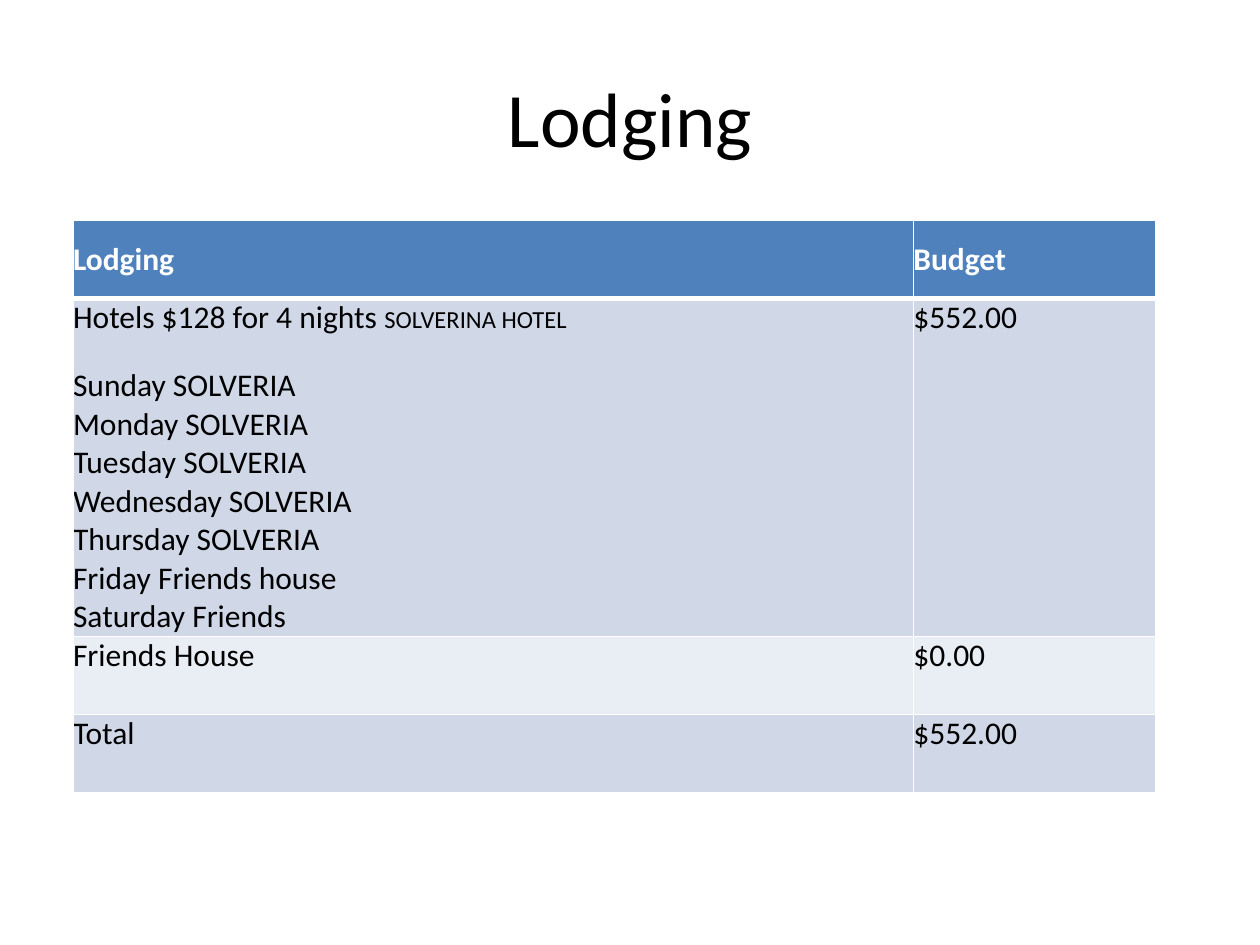
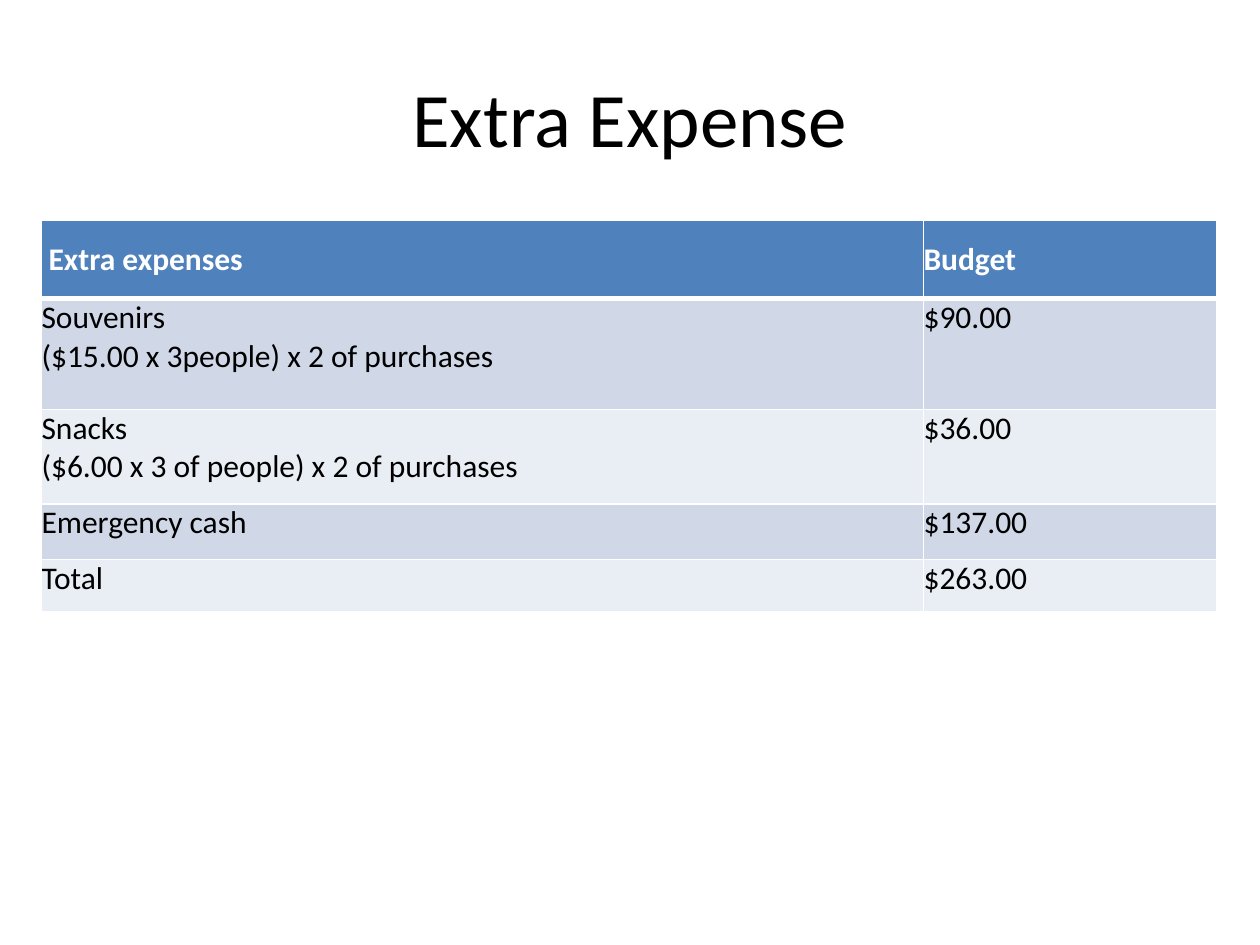
from lxml import etree
from pptx import Presentation
from pptx.dml.color import RGBColor
from pptx.enum.text import MSO_ANCHOR, PP_ALIGN
from pptx.oxml.ns import qn
from pptx.util import Inches, Pt

MIDDLE, TOP = MSO_ANCHOR.MIDDLE, MSO_ANCHOR.TOP
CENTER = PP_ALIGN.CENTER

BLACK = RGBColor(0x00, 0x00, 0x00)
WHITE = RGBColor(0xFF, 0xFF, 0xFF)
HEADER_BLUE = RGBColor(0x4F, 0x81, 0xBD)
BANDS = (RGBColor(0xD0, 0xD8, 0xE8), RGBColor(0xE9, 0xED, 0xF4))

FONT = "Calibri"
BODY_SIZE, NOTE_SIZE, TITLE_SIZE = 18, 14, 44
NIGHTS_GAP = 17  # points between the hotel line and the list of nights
TABLE_TOP = 1.75

# Each cell is a list of lines
LODGING_ROWS = [
    (["Lodging"], ["Budget"]),
    (["Hotels $128 for 4 nights ", "Sunday SOLVERIA", "Monday SOLVERIA",
      "Tuesday SOLVERIA", "Wednesday SOLVERIA", "Thursday SOLVERIA",
      "Friday Friends house", "Saturday Friends"], ["$552.00"]),
    (["Friends House"], ["$0.00"]),
    (["Total"], ["$552.00"]),
]
EXTRA_ROWS = [
    ([" Extra expenses"], ["Budget"]),
    (["Souvenirs", "($15.00 x 3people) x 2 of purchases"], ["$90.00"]),
    (["Snacks", "($6.00 x 3 of people) x 2 of purchases"], ["$36.00"]),
    (["Emergency cash"], ["$137.00"]),
    (["Total"], ["$263.00"]),
]


def style_font(font, size, color, bold=False):
    font.name, font.size, font.bold = FONT, Pt(size), bold
    font.color.rgb = color


def add_title(slide, title):
    frame = slide.shapes.add_textbox(
        Inches(0.5), Inches(0.3), Inches(9), Inches(1.25)).text_frame
    frame.word_wrap = True
    frame.vertical_anchor = MIDDLE
    heading = frame.paragraphs[0]
    heading.text = title
    heading.alignment = CENTER
    style_font(heading.font, TITLE_SIZE, BLACK)


def set_borders(cell, top, bottom):
    """Draw white cell borders; top and bottom widths are in points."""
    properties = cell._tc.get_or_add_tcPr()
    for side, width in (("L", 1), ("R", 1), ("T", top), ("B", bottom)):
        line = etree.SubElement(properties, qn(f"a:ln{side}"), w=str(Pt(width)))
        fill = etree.SubElement(line, qn("a:solidFill"))
        etree.SubElement(fill, qn("a:srgbClr"), val=str(WHITE))


def fill_cell(cell, lines, row):
    is_header = row == 0
    set_borders(cell, top=3 if row == 1 else 1, bottom=3 if is_header else 1)
    cell.fill.solid()
    cell.fill.fore_color.rgb = HEADER_BLUE if is_header else BANDS[(row - 1) % 2]
    cell.margin_left = cell.margin_right = cell.margin_top = cell.margin_bottom = 0
    cell.vertical_anchor = MIDDLE if is_header else TOP
    cell.text_frame.text = "\n".join(lines)
    for paragraph in cell.text_frame.paragraphs:
        style_font(paragraph.font, BODY_SIZE, WHITE if is_header else BLACK, is_header)


def add_budget_table(slide, left, widths, heights, rows):
    table = slide.shapes.add_table(
        len(rows), len(widths), Inches(left), Inches(TABLE_TOP),
        Inches(sum(widths)), Inches(sum(heights))).table
    for column, width in zip(table.columns, widths):
        column.width = Inches(width)
    for index, (height, cells) in enumerate(zip(heights, rows)):
        table.rows[index].height = Inches(height)
        for column, lines in enumerate(cells):
            fill_cell(table.cell(index, column), lines, index)
    return table


def add_hotel_note(cell, hotel):
    """Add the hotel's name in small type and set the nights apart below it."""
    hotel_line = cell.text_frame.paragraphs[0]
    hotel_line.space_after = Pt(NIGHTS_GAP)
    note = hotel_line.add_run()
    note.text = hotel
    note.font.size = Pt(NOTE_SIZE)


def main():
    deck = Presentation()
    deck.slide_width, deck.slide_height = Inches(10), Inches(7.5)
    blank = deck.slide_layouts[6]

    # Lodging
    lodging = deck.slides.add_slide(blank)
    add_title(lodging, "Lodging")
    lodging_table = add_budget_table(
        lodging, 0.58, (6.67, 1.92), (0.62, 2.68, 0.62, 0.62), LODGING_ROWS)
    add_hotel_note(lodging_table.cell(1, 0), "SOLVERINA HOTEL")

    # Extra expense
    extra = deck.slides.add_slide(blank)
    add_title(extra, "Extra Expense")
    add_budget_table(
        extra, 0.33, (7, 2.33), (0.62, 0.88, 0.75, 0.44, 0.42), EXTRA_ROWS)

    deck.save("out.pptx")


if __name__ == "__main__":
    main()
